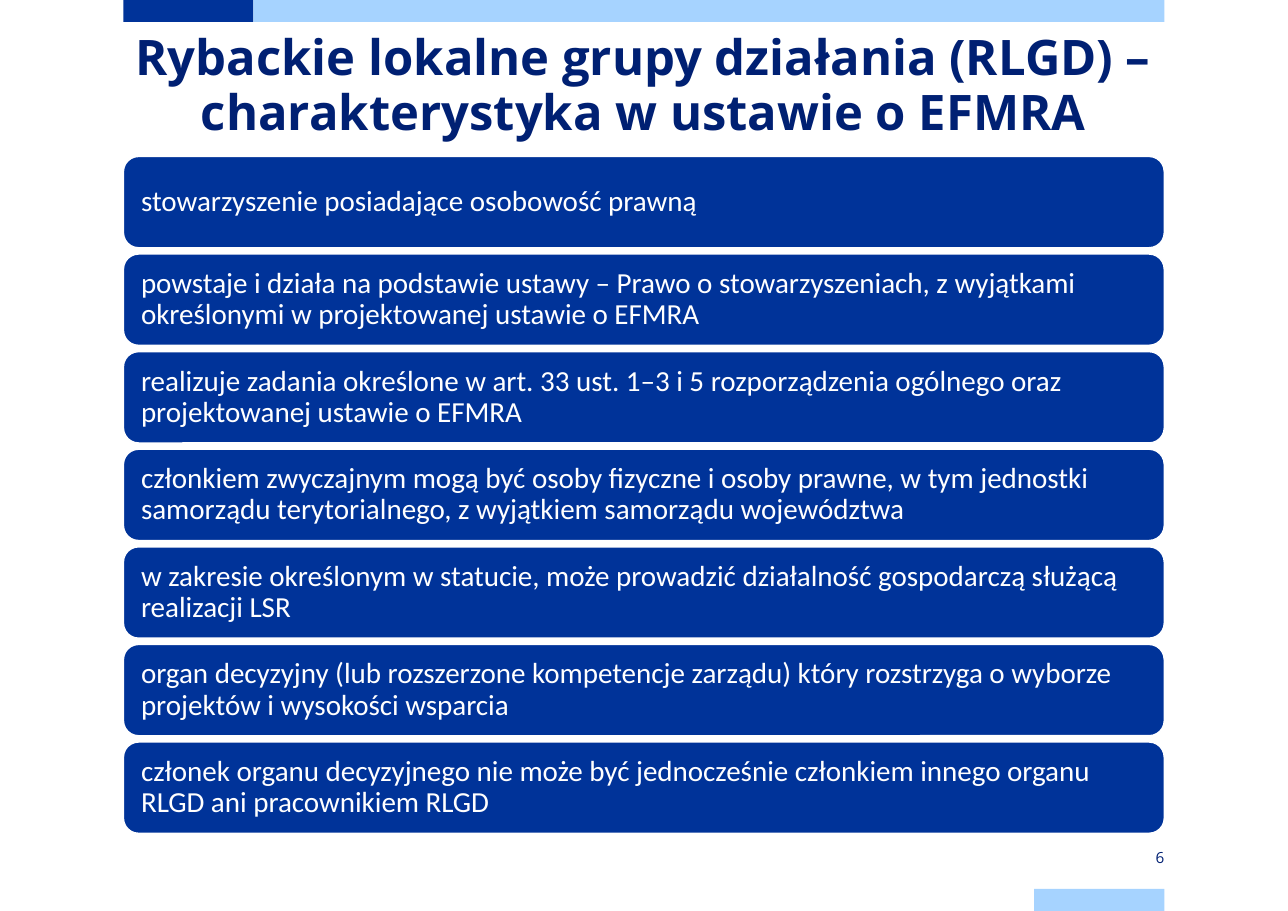
import pptx
import pptx.dml.color
import pptx.enum.shapes
import pptx.enum.text
import pptx.util

COLORS = {"navy": "002073", "blue": "003399", "sky": "A6D3FF", "white": "FFFFFF"}
SHAPES = pptx.enum.shapes.MSO_SHAPE
ALIGN = pptx.enum.text.PP_ALIGN
ANCHOR = pptx.enum.text.MSO_ANCHOR

LEFT_MARGIN = 1.12
COLUMN = 1.181
ROW = 0.2
COLUMNS = 8
CARD_TOP = 7.1
CARD_PITCH = 4.43
CARD_HEIGHT = 4.15

TITLE = "Rybackie lokalne grupy działania (RLGD) – charakterystyka w ustawie o EFMRA"
FEATURES = [
    "stowarzyszenie posiadające osobowość prawną",
    "powstaje i działa na podstawie ustawy – Prawo o stowarzyszeniach, z wyjątkami "
    "określonymi w projektowanej ustawie o EFMRA",
    "realizuje zadania określone w art. 33 ust. 1–3 i 5 rozporządzenia ogólnego oraz "
    "projektowanej ustawie o EFMRA",
    "członkiem zwyczajnym mogą być osoby fizyczne i osoby prawne, w tym jednostki "
    "samorządu terytorialnego, z wyjątkiem samorządu województwa",
    "w zakresie określonym w statucie, może prowadzić działalność gospodarczą służącą "
    "realizacji LSR",
    "organ decyzyjny (lub rozszerzone kompetencje zarządu) który rozstrzyga o wyborze "
    "projektów i wysokości wsparcia",
    "członek organu decyzyjnego nie może być jednocześnie członkiem innego organu "
    "RLGD ani pracownikiem RLGD",
]


def color(name):
    return pptx.dml.color.RGBColor.from_string(COLORS[name])


def area(column, row, columns, rows):
    lengths = (LEFT_MARGIN + column * COLUMN, row * ROW, columns * COLUMN, rows * ROW)
    return [pptx.util.Inches(length) for length in lengths]


def set_values(target, values):
    for name, value in values.items():
        setattr(target, name, value)


def write(box, text, ink, font, paragraph, anchor, insets=(0, 0)):
    side, edge = [pptx.util.Inches(inset) for inset in insets]
    frame = box.text_frame
    set_values(frame, {
        "word_wrap": True, "vertical_anchor": anchor,
        "margin_left": side, "margin_right": side,
        "margin_top": edge, "margin_bottom": edge,
    })
    para = frame.paragraphs[0]
    set_values(para, paragraph)
    span = para.add_run()
    span.text = text
    set_values(span.font, font)
    span.font.color.rgb = color(ink)


def add_block(page, kind, place, fill):
    block = page.shapes.add_shape(kind, *area(*place))
    block.shadow.inherit = False
    block.fill.solid()
    block.fill.fore_color.rgb = color(fill)
    block.line.fill.background()
    return block


def add_card(page, place, text):
    card = add_block(page, SHAPES.ROUNDED_RECTANGLE, place, "blue")
    card.line.color.rgb = color("white")
    card.line.width = pptx.util.Pt(1)
    write(card, text, "white",
          {"name": "Calibri", "size": pptx.util.Pt(19)},
          {"alignment": ALIGN.LEFT, "line_spacing": 0.9},
          ANCHOR.MIDDLE, (0.12, 0.12))


def add_label(page, place, text, font, paragraph, anchor, insets=(0, 0)):
    label = page.shapes.add_textbox(*area(*place))
    write(label, text, "navy", {"name": "Open Sans", **font}, paragraph, anchor, insets)


def main():
    deck = pptx.Presentation()
    deck.slide_width = pptx.util.Inches(11.69)
    deck.slide_height = pptx.util.Inches(8.27)
    page = deck.slides.add_slide(deck.slide_layouts[6])

    for place, fill in (
        ((0, 0, 1, 1), "blue"),
        ((1, 0, COLUMNS - 1, 1), "sky"),
        ((COLUMNS - 1, 40.35, 1, 1), "sky"),
    ):
        add_block(page, SHAPES.RECTANGLE, place, fill)

    add_label(page, (0, 1.35, COLUMNS, 5.9), TITLE,
              {"size": pptx.util.Pt(32), "bold": True},
              {"alignment": ALIGN.CENTER, "line_spacing": pptx.util.Pt(36)},
              ANCHOR.TOP)

    for index, feature in enumerate(FEATURES):
        place = (0, CARD_TOP + index * CARD_PITCH, COLUMNS, CARD_HEIGHT)
        add_card(page, place, feature)

    add_label(page, (COLUMNS - 1, 38.4, 1, 1), "6",
              {"size": pptx.util.Pt(10)}, {"alignment": ALIGN.RIGHT},
              ANCHOR.MIDDLE, (0, 0.08))

    deck.save("out.pptx")


if __name__ == "__main__":
    main()
